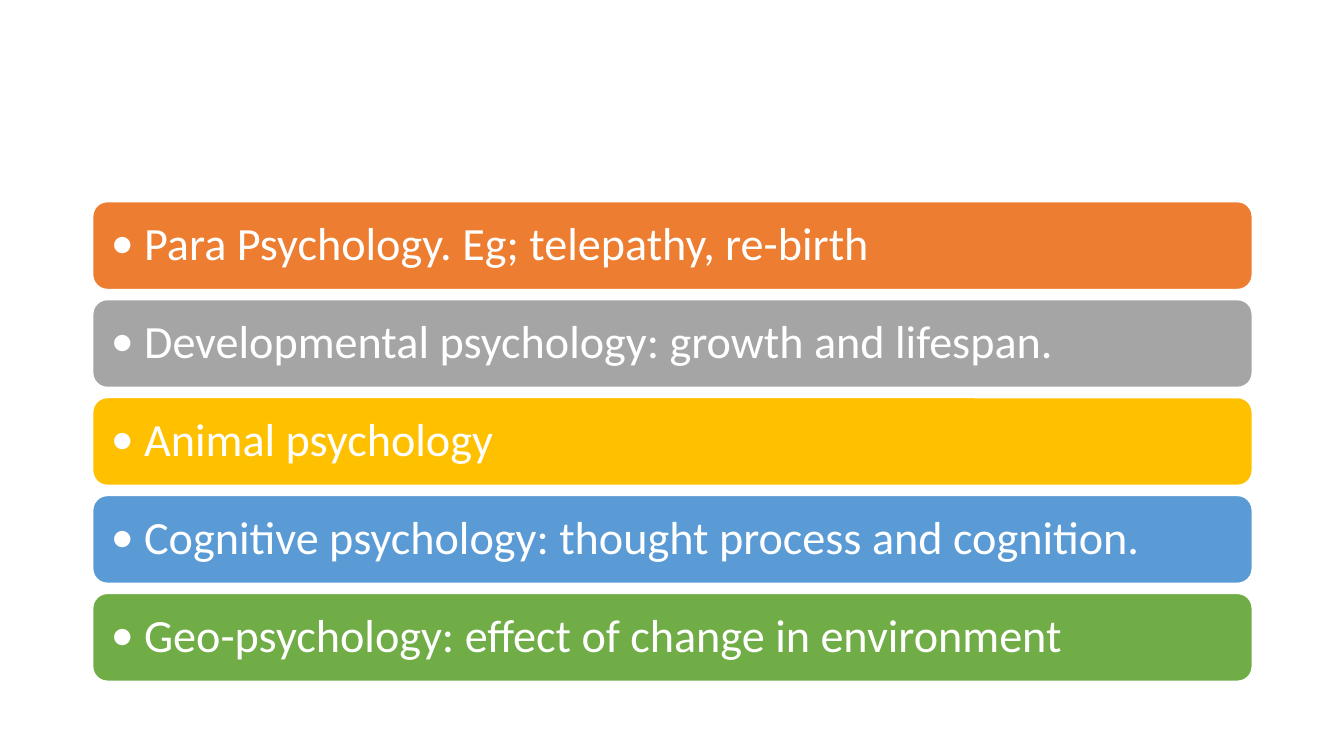
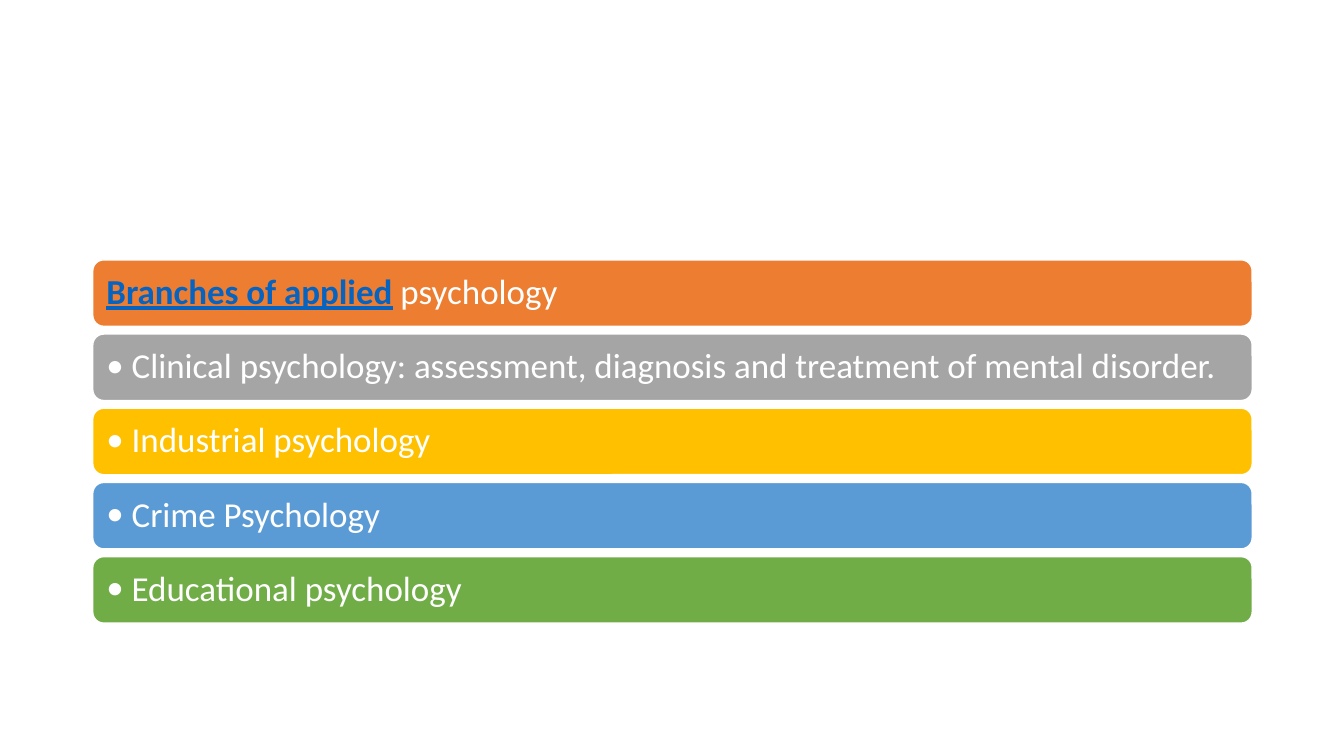
from dataclasses import dataclass

from lxml.etree import SubElement
from pptx import Presentation
from pptx.dml.color import RGBColor
from pptx.enum.shapes import MSO_SHAPE
from pptx.enum.text import MSO_ANCHOR, PP_ALIGN
from pptx.oxml.ns import qn
from pptx.util import Inches, Pt


@dataclass(frozen=True)
class Theme:
    font: str = "Calibri"
    white: str = "FFFFFF"
    accent: str = "0563C1"
    bands: tuple = ("ED7D31", "A5A5A5", "FFC000", "5B9BD5", "70AD47")
    large: int = 33
    medium: int = 25
    left: float = 0.92
    width: float = 11.5
    center: float = 4.38
    band_ems: float = 1.9
    gap_ems: float = 0.22
    margin_ems: float = 0.3
    bullet_ems: float = 0.72


THEME = Theme()

BRANCHES = (
    "Para Psychology. Eg; telepathy, re-birth",
    "Developmental psychology: growth and lifespan.",
    "Animal psychology",
    "Cognitive psychology: thought process and cognition.",
    "Geo-psychology: effect of change in environment",
)
APPLIED_HEADING = ("Branches of applied", " psychology")
APPLIED_BRANCHES = (
    "Clinical psychology: assessment, diagnosis and treatment of mental disorder.",
    "Industrial psychology",
    "Crime Psychology",
    "Educational psychology",
)


def color(value):
    return RGBColor.from_string(value)


def add_bullet(paragraph, indent):
    properties = paragraph._p.get_or_add_pPr()
    properties.set("marL", str(indent))
    properties.set("indent", str(-indent))
    SubElement(properties, qn("a:buFont")).set("typeface", THEME.font)
    SubElement(properties, qn("a:buChar")).set("char", "•")


def add_run(paragraph, text, size, emphasis=False):
    run = paragraph.add_run()
    run.text = text
    run.font.name = THEME.font
    run.font.size = Pt(size)
    run.font.bold = emphasis
    run.font.underline = emphasis
    run.font.color.rgb = color(THEME.accent if emphasis else THEME.white)


def add_band(slide, top, size, fill):
    em = size / 72
    height = THEME.band_ems * em
    shape = slide.shapes.add_shape(
        MSO_SHAPE.ROUNDED_RECTANGLE,
        Inches(THEME.left), Inches(top), Inches(THEME.width), Inches(height),
    )
    shape.shadow.inherit = False
    shape.fill.solid()
    shape.fill.fore_color.rgb = color(fill)
    shape.line.color.rgb = color(THEME.white)
    shape.line.width = Pt(1)
    frame = shape.text_frame
    frame.word_wrap = True
    frame.vertical_anchor = MSO_ANCHOR.MIDDLE
    frame.margin_left = frame.margin_right = Inches(THEME.margin_ems * em)
    frame.margin_top = frame.margin_bottom = 0
    paragraph = frame.paragraphs[0]
    paragraph.alignment = PP_ALIGN.LEFT
    paragraph.line_spacing = 0.9
    return paragraph


def add_band_slide(presentation, size, items, heading=None):
    slide = presentation.slides.add_slide(presentation.slide_layouts[6])
    em = size / 72
    pitch = (THEME.band_ems + THEME.gap_ems) * em
    total = pitch * len(THEME.bands) - THEME.gap_ems * em
    top = THEME.center - total / 2
    paragraphs = [
        add_band(slide, top + index * pitch, size, fill)
        for index, fill in enumerate(THEME.bands)
    ]
    if heading:
        emphasized, plain = heading
        paragraph = paragraphs.pop(0)
        add_run(paragraph, emphasized, size, emphasis=True)
        add_run(paragraph, plain, size)
    for paragraph, item in zip(paragraphs, items):
        add_bullet(paragraph, Inches(THEME.bullet_ems * em))
        add_run(paragraph, item, size)


def main():
    presentation = Presentation()
    presentation.slide_width = Inches(13.33)
    presentation.slide_height = Inches(7.5)
    add_band_slide(presentation, THEME.large, BRANCHES)
    add_band_slide(presentation, THEME.medium, APPLIED_BRANCHES, APPLIED_HEADING)
    presentation.save("out.pptx")


if __name__ == "__main__":
    main()
